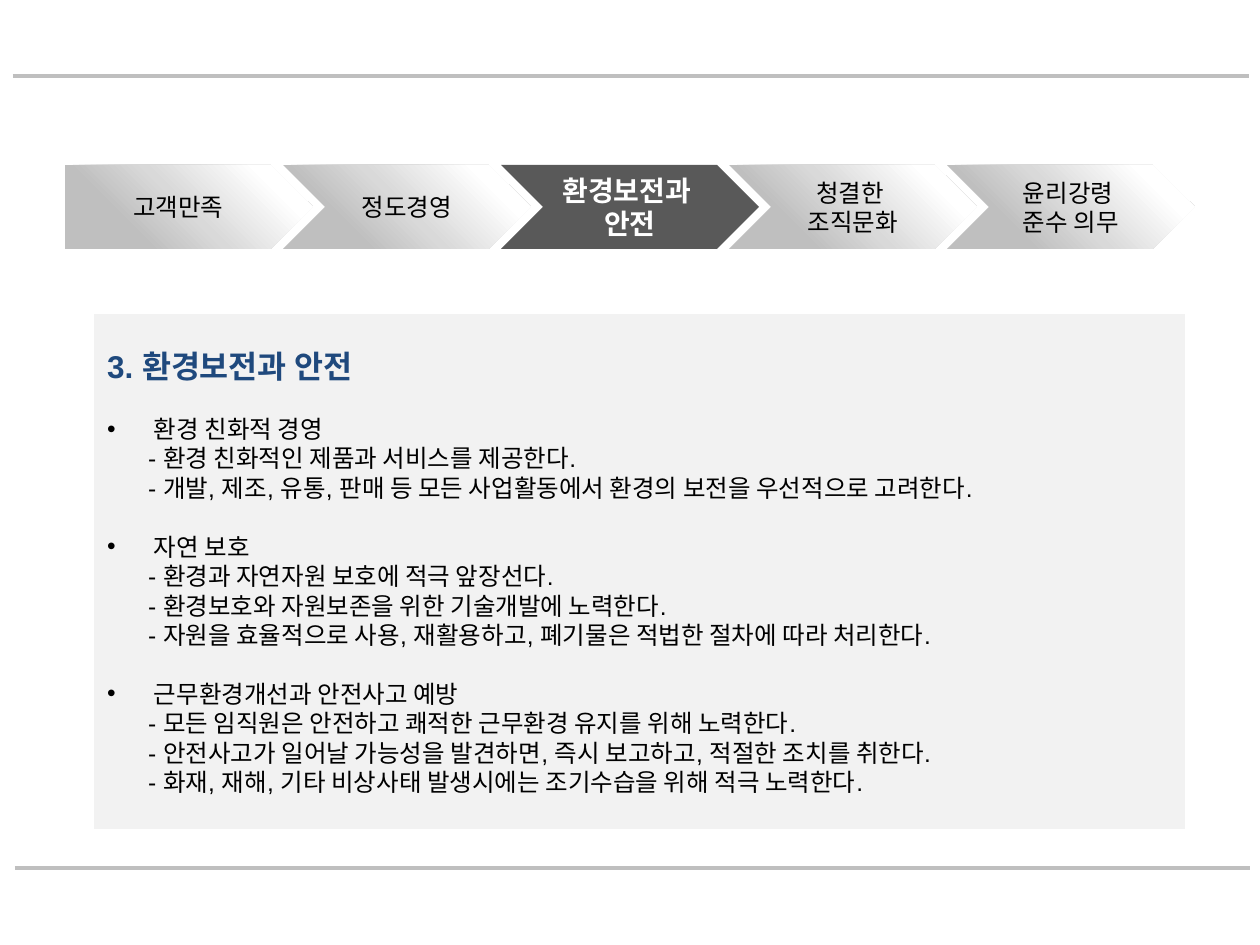
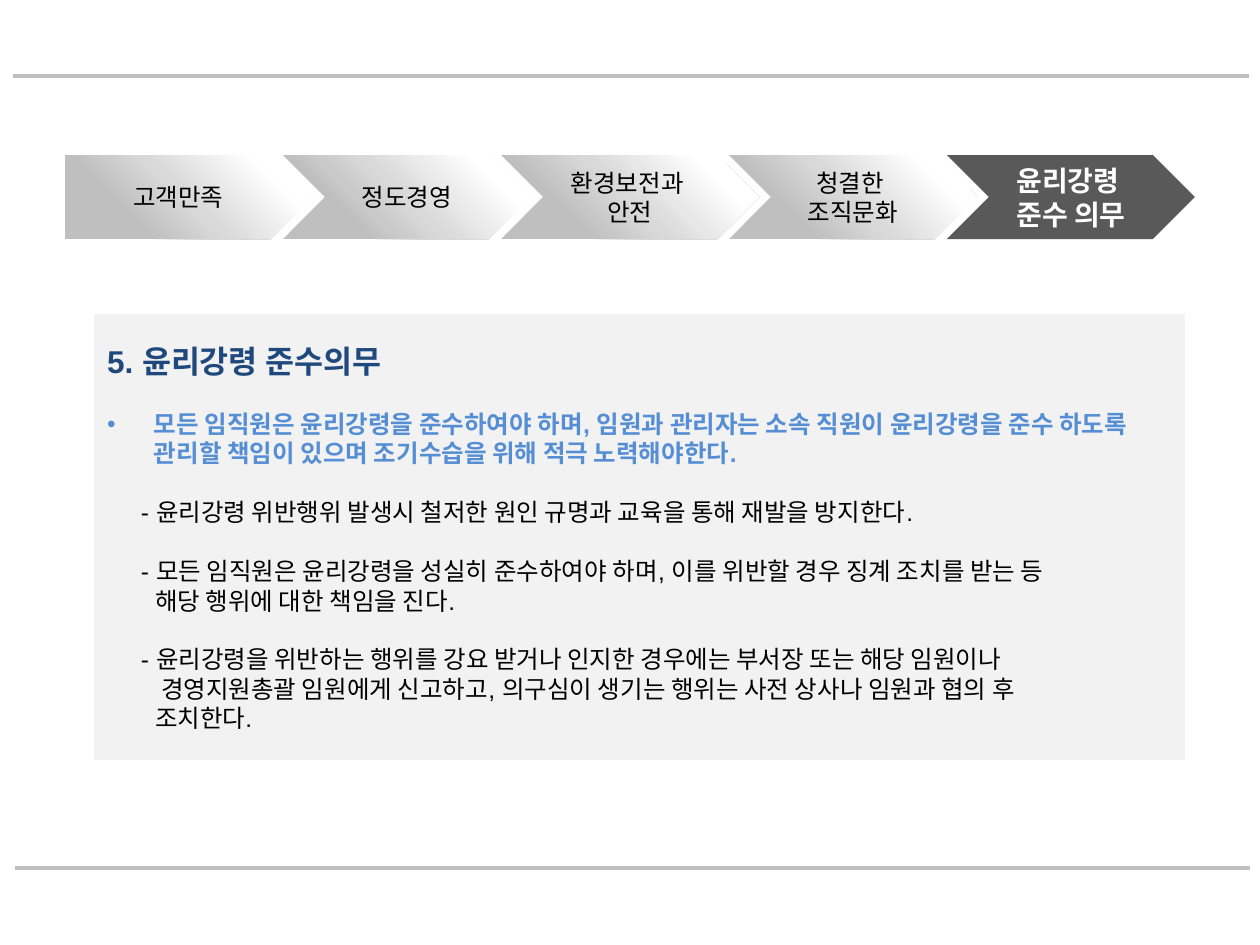
from lxml.etree import SubElement
from pptx import Presentation
from pptx.dml.color import RGBColor
from pptx.enum.shapes import MSO_CONNECTOR, MSO_SHAPE
from pptx.enum.text import MSO_ANCHOR as ANCHOR, MSO_AUTO_SIZE, PP_ALIGN as ALIGN
from pptx.oxml.ns import qn
from pptx.util import Emu, Pt

PX = 914400 / 126
RULE = RGBColor(0xBF, 0xBF, 0xBF)
PANEL = RGBColor(0xF2, 0xF2, 0xF2)
ACTIVE = RGBColor(0x59, 0x59, 0x59)
NAVY = RGBColor(0x1F, 0x49, 0x7D)
BLUE = RGBColor(0x55, 0x8E, 0xD5)
BLACK = RGBColor(0, 0, 0)
WHITE = RGBColor(0xFF, 0xFF, 0xFF)
STEP_STOPS = [(26, RULE), (49, RGBColor(0xD9, 0xD9, 0xD9)), (82, WHITE)]

KOREAN = "Noto Sans CJK KR"
HEADING = {"name": "Arial", "size": Pt(18), "bold": True, "color": NAVY}
PLAIN = {"name": "Arial", "size": Pt(14), "bold": False, "color": BLACK}
STRONG = {**PLAIN, "bold": True, "color": BLUE}
STEP = {**PLAIN, "name": KOREAN}
STEP_ON = {"name": KOREAN, "size": Pt(16), "bold": True, "color": WHITE}

STEPS = [["고객만족"], ["정도경영"], ["환경보전과 ", "안전"],
         ["청결한 ", "조직문화"], ["윤리강령 ", "준수 의무"]]
STEP_WIDTHS = [248, 248, 258, 248, 248]
STEP_OVERLAP = 30
POINT = 47
INSET = 13

SLIDES = [
    {
        "active": 2, "steps_top": 165, "panel": (94, 314, 1091, 515), "pad": 33,
        "heading": "3. 환경보전과 안전", "point": PLAIN,
        "groups": [
            [(POINT, "환경 친화적 경영"),
             (41, "- 환경 친화적인 제품과 서비스를 제공한다."),
             (41, "- 개발, 제조, 유통, 판매 등 모든 사업활동에서 환경의 보전을 우선적으로 고려한다.")],
            [(POINT, "자연 보호"),
             (41, "- 환경과 자연자원 보호에 적극 앞장선다."),
             (41, "- 환경보호와 자원보존을 위한 기술개발에 노력한다."),
             (41, "- 자원을 효율적으로 사용, 재활용하고, 폐기물은 적법한 절차에 따라 처리한다.")],
            [(POINT, "근무환경개선과 안전사고 예방"),
             (41, "- 모든 임직원은 안전하고 쾌적한 근무환경 유지를 위해 노력한다."),
             (41, "- 안전사고가 일어날 가능성을 발견하면, 즉시 보고하고, 적절한 조치를 취한다."),
             (41, "- 화재, 재해, 기타 비상사태 발생시에는 조기수습을 위해 적극 노력한다.")],
        ],
    },
    {
        "active": 4, "steps_top": 155, "panel": (94, 314, 1091, 446), "pad": 28,
        "heading": "5. 윤리강령 준수의무", "point": STRONG,
        "groups": [
            [(POINT, "모든 임직원은 윤리강령을 준수하여야 하며, 임원과 관리자는 소속 직원이 윤리강령을 "
                     "준수 하도록 관리할 책임이 있으며 조기수습을 위해 적극 노력해야한다.")],
            [(34, "- 윤리강령 위반행위 발생시 철저한 원인 규명과 교육을 통해 재발을 방지한다.")],
            [(34, "- 모든 임직원은 윤리강령을 성실히 준수하여야 하며, 이를 위반할 경우 징계 조치를 받는 등"),
             (48, "해당 행위에 대한 책임을 진다.")],
            [(34, "- 윤리강령을 위반하는 행위를 강요 받거나 인지한 경우에는 부서장 또는 해당 임원이나"),
             (54, "경영지원총괄 임원에게 신고하고, 의구심이 생기는 행위는 사전 상사나 임원과 협의 후"),
             (48, "조치한다.")],
        ],
    },
]


def px(n):
    return Emu(round(n * PX))


def place(sp, x, y, w, h):
    sp.left, sp.top, sp.width, sp.height = map(px, (x, y, w, h))


def setup(tf, anchor, **margins):
    tf.word_wrap = True
    tf.auto_size = MSO_AUTO_SIZE.NONE
    tf.vertical_anchor = anchor
    for side, n in margins.items():
        setattr(tf, f"margin_{side}", px(n))


def write(tf, i, text, fmt, align=ALIGN.LEFT, before=0):
    p = tf.paragraphs[0] if i == 0 else tf.add_paragraph()
    p.alignment = align
    p.line_spacing = Pt(fmt["size"].pt * 1.2)
    p.space_before = Pt(before)
    r = p.add_run()
    r.text = text
    for key, value in fmt.items():
        if key == "color":
            r.font.color.rgb = value
        else:
            setattr(r.font, key, value)
    SubElement(r.font._element, qn("a:ea"), typeface=KOREAN)
    return p


def indent(p, left):
    pPr = p._p.get_or_add_pPr()
    is_point = left == POINT
    pPr.set("marL", str(px(left)))
    pPr.set("indent", str(px(-left if is_point else 0)))
    if is_point:
        SubElement(pPr, qn("a:buFont"), typeface="Arial")
        SubElement(pPr, qn("a:buChar"), char="•")
    else:
        SubElement(pPr, qn("a:buNone"))


def add_rules(s, layout):
    for x1, x2, y in [(13, 1249, 76), (15, 1250, 868)]:
        line = s.shapes.add_connector(MSO_CONNECTOR.STRAIGHT, px(x1), px(y), px(x2), px(y))
        line.line.color.rgb = RULE
        line.line.width = Pt(2.25)
        SubElement(line._element.spPr, qn("a:effectLst"))
        layout.shapes._spTree.append(line._element)


def fill_step(sp):
    sp.fill.gradient()
    sp.fill.gradient_angle = 45
    stops = sp._element.spPr.find(".//" + qn("a:gsLst"))
    stops.clear()
    for pos, color in STEP_STOPS:
        gs = SubElement(stops, qn("a:gs"), pos=str(pos * 1000))
        SubElement(gs, qn("a:srgbClr"), val=str(color))


def add_steps(s, x, y, h, active):
    for i, (lines, w) in enumerate(zip(STEPS, STEP_WIDTHS)):
        kind = MSO_SHAPE.CHEVRON if i else MSO_SHAPE.PENTAGON
        sp = s.shapes.add_shape(kind, px(x), px(y), px(w), px(h))
        sp.shadow.inherit = False
        sp.line.fill.background()
        if i == active:
            sp.fill.solid()
            sp.fill.fore_color.rgb = ACTIVE
        else:
            fill_step(sp)
        setup(sp.text_frame, ANCHOR.MIDDLE)
        for j, text in enumerate(lines):
            write(sp.text_frame, j, text, STEP_ON if i == active else STEP, ALIGN.CENTER)
        x += w - STEP_OVERLAP


def add_panel(s, box, pad, heading, groups, point):
    x, y, w, h = box
    body, title = s.placeholders[1], s.shapes.title
    place(body, *box)
    body.fill.solid()
    body.fill.fore_color.rgb = PANEL
    tf = body.text_frame
    setup(tf, ANCHOR.TOP, left=INSET, right=INSET, top=pad + 67, bottom=0)
    i = 0
    for group in groups:
        for n, (left, text) in enumerate(group):
            before = 16.8 if i and n == 0 else 0
            fmt = point if left == POINT else PLAIN
            indent(write(tf, i, text, fmt, before=before), left)
            i += 1

    place(title, x, y + pad, w, 38)
    setup(title.text_frame, ANCHOR.MIDDLE, left=INSET, right=INSET, top=0, bottom=0)
    write(title.text_frame, 0, heading, HEADING)
    s.shapes._spTree.append(title._element)


def main():
    prs = Presentation()
    prs.slide_width, prs.slide_height = px(1260), px(945)
    layout = prs.slide_layouts[1]
    for i, page in enumerate(SLIDES):
        s = prs.slides.add_slide(layout)
        if i == 0:
            add_rules(s, layout)
        add_panel(s, page["panel"], page["pad"], page["heading"], page["groups"], page["point"])
        add_steps(s, 65, page["steps_top"], 84, page["active"])
    prs.save("out.pptx")


if __name__ == "__main__":
    main()
